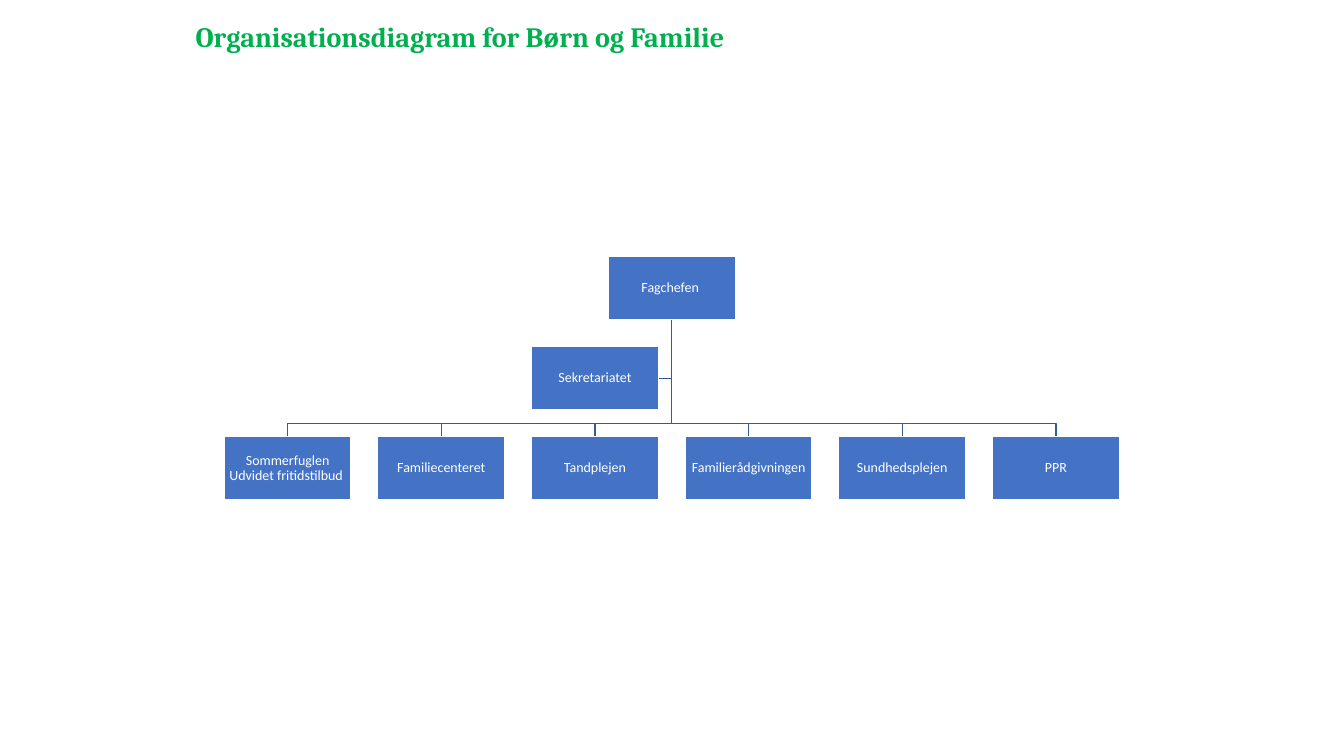
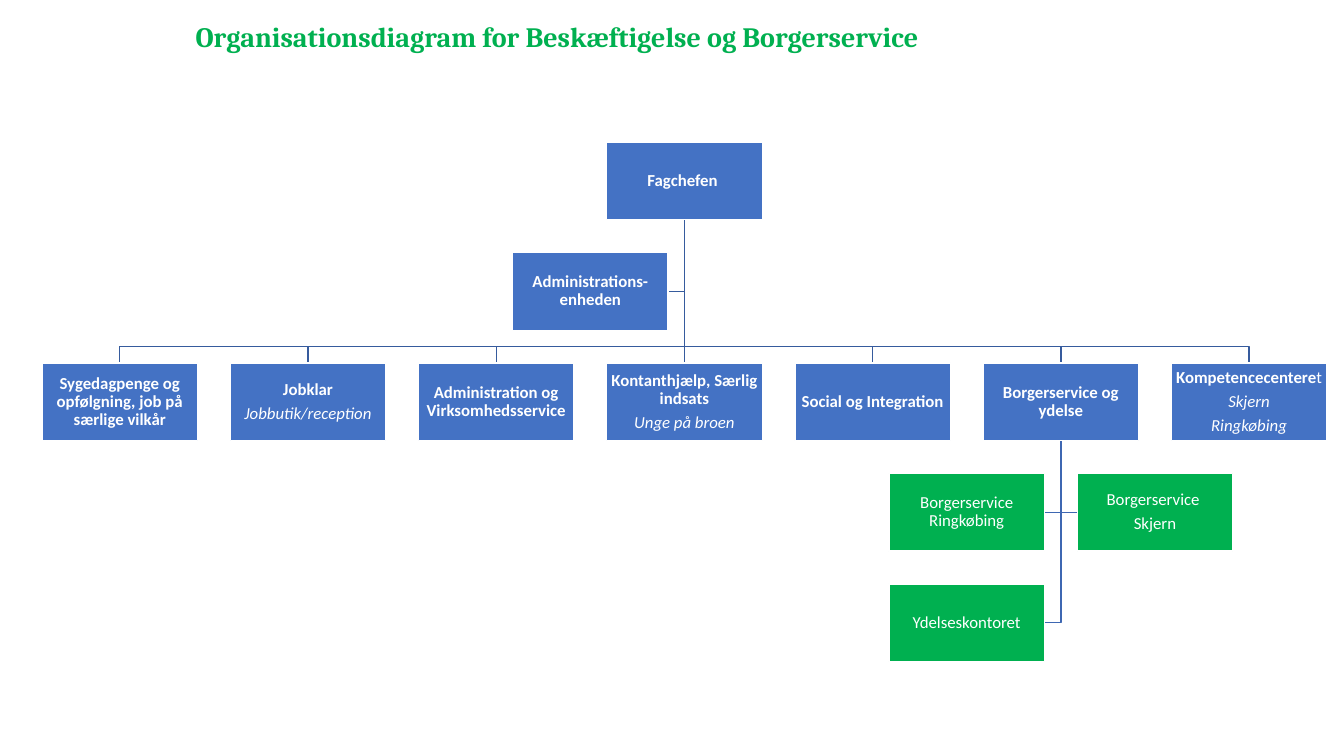
from pptx import Presentation
from pptx.dml.color import RGBColor
from pptx.enum.shapes import MSO_CONNECTOR, MSO_SHAPE
from pptx.enum.text import MSO_ANCHOR, PP_ALIGN
from pptx.oxml.ns import qn
from pptx.util import Cm, Pt

RECT = MSO_SHAPE.RECTANGLE
STRAIGHT = MSO_CONNECTOR.STRAIGHT
TOP, MIDDLE = MSO_ANCHOR.TOP, MSO_ANCHOR.MIDDLE
CENTER, LEFT = PP_ALIGN.CENTER, PP_ALIGN.LEFT

BLUE, GREEN, WHITE = "4472C4", "00B050", "FFFFFF"
TRUNK, BRANCH = "365B9D", "3E67B2"
TITLE = {"name": "Cambria", "size": Pt(20), "bold": True}
PLAIN, BOLD, ITALIC = {}, {"bold": True}, {"italic": True}

COL_PITCH = 1.21
ROW_PITCH = 0.71
HEIGHT = 0.5
HALF_GAP = 0.105


def color(target, value):
    target.rgb = RGBColor.from_string(value)


def add_run(p, text, fmt, text_color):
    r = p.add_run()
    r.text = text
    for key, value in fmt.items():
        setattr(r.font, key, value)
    color(r.font.color, text_color)


def set_text(tf, paras, base, text_color, align, anchor, inset):
    tf.word_wrap = True
    tf.vertical_anchor = anchor
    tf.margin_left = tf.margin_right = Cm(inset[0])
    tf.margin_top = tf.margin_bottom = Cm(inset[1])
    for i, runs in enumerate(paras):
        p = tf.paragraphs[0] if i == 0 else tf.add_paragraph()
        p.alignment = align
        p.line_spacing = 0.9
        if i:
            p.space_before = Pt(base["size"].pt * 0.35)
        for text, fmt in runs:
            for j, line in enumerate(text.split("\n")):
                if j:
                    p.add_line_break()
                add_run(p, line, {**base, **fmt}, text_color)


def add_title(s, text, width):
    tf = s.shapes.add_textbox(Cm(4.68), Cm(0.46), Cm(width), Cm(1.24)).text_frame
    set_text(tf, [[(text, TITLE)]], TITLE, GREEN, LEFT, TOP, (0.25, 0.13))


def add_line(s, points, line_color):
    start, *rest = [(Cm(x), Cm(y)) for x, y in points]
    if len(rest) == 1:
        sp = s.shapes.add_connector(STRAIGHT, *start, *rest[0])
        spPr = sp._element.spPr
        spPr.append(spPr.makeelement(qn("a:effectLst"), {}))
    else:
        outline = s.shapes.build_freeform(*start)
        outline.add_line_segments(rest, close=False)
        sp = outline.convert_to_shape()
        sp.shadow.inherit = False
        sp.fill.background()
    sp.line.width = Pt(1)
    color(sp.line.color, line_color)


def add_unit(s, x, y, w, size, paras, fill=BLUE):
    sp = s.shapes.add_shape(RECT, Cm(x), Cm(y), Cm(w), Cm(w * HEIGHT))
    sp.shadow.inherit = False
    sp.fill.solid()
    color(sp.fill.fore_color, fill)
    color(sp.line.color, WHITE)
    sp.line.width = Pt(1)
    base = {"name": "Calibri", "size": Pt(size)}
    set_text(sp.text_frame, paras, base, WHITE, CENTER, MIDDLE, (0.02, 0.02))


def add_side_units(s, cx, y, w, size, units, fill, line_color):
    start = y - w * (ROW_PITCH - HEIGHT)
    for side, row, paras in units:
        top = y + row * w * ROW_PITCH
        mid = top + w * HEIGHT / 2
        edge = cx + side * w * HALF_GAP
        add_line(s, [(cx, start), (cx, mid), (edge, mid)], line_color)
        add_unit(s, edge if side > 0 else edge - w, top, w, size, paras, fill)


def add_chart_tree(s, left, top, w, size, boss, assistant, units, parent=None, children=()):
    row_tops = [top + i * w * ROW_PITCH for i in range(4)]
    centers = [left + w / 2 + i * w * COL_PITCH for i in range(len(units))]
    cx = (centers[0] + centers[-1]) / 2
    bus = row_tops[2] - w * HALF_GAP
    start = (cx, top + w * HEIGHT)

    add_side_units(s, cx, row_tops[1], w, size, [(-1, 0, assistant)], BLUE, TRUNK)
    for x in centers:
        bend = [(cx, bus), (x, bus)] if abs(x - cx) > 0.01 else []
        add_line(s, [start, *bend, (x, row_tops[2])], TRUNK)
    if children:
        add_side_units(s, centers[parent], row_tops[3], w, size, children, GREEN, BRANCH)
    add_unit(s, cx - w / 2, top, w, size, boss)
    for x, paras in zip(centers, units):
        add_unit(s, x - w / 2, row_tops[2], w, size, paras)


def family_slide(s):
    add_title(s, "Organisationsdiagram for Børn og Familie", 15.06)
    names = ["Sommerfuglen Udvidet fritidstilbud ", "Familiecenteret", "Tandplejen",
             "Familierådgivningen", "Sundhedsplejen", "PPR"]
    add_chart_tree(s, 5.65, 6.46, 3.2, 10,
                   [[("Fagchefen ", PLAIN)]], [[("Sekretariatet", PLAIN)]],
                   [[[(name, PLAIN)]] for name in names])


def employment_slide(s):
    add_title(s, "Organisationsdiagram for Beskæftigelse og Borgerservice", 21.87)
    units = [
        [[("Sygedagpenge og opfølgning, job på særlige vilkår", BOLD)]],
        [[("Jobklar", BOLD)], [("Jobbutik/reception", ITALIC)]],
        [[("Administration og\nVirksomhedsservice", BOLD)]],
        [[("Kontanthjælp, Særlig indsats", BOLD)], [("Unge på broen", ITALIC)]],
        [[("Social og Integration", BOLD)]],
        [[("Borgerservice og ydelse", BOLD)]],
        [[("Kompetencecentere", BOLD), ("t", PLAIN)],
         [("Skjern", ITALIC)], [("Ringkøbing", ITALIC)]],
    ]
    children = [
        (-1, 0, [[("Borgerservice Ringkøbing", PLAIN)]]),
        (1, 0, [[("Borgerservice ", PLAIN)], [("Skjern", PLAIN)]]),
        (-1, 1, [[("Ydelseskontoret", PLAIN)]]),
    ]
    add_chart_tree(s, 1.06, 3.58, 3.92, 12,
                   [[("Fagchefen ", BOLD)]], [[("Administrations-enheden", BOLD)]],
                   units, 5, children)


def main():
    prs = Presentation()
    prs.slide_width, prs.slide_height = Cm(33.87), Cm(19.05)
    for build in (family_slide, employment_slide):
        build(prs.slides.add_slide(prs.slide_layouts[6]))
    prs.save("out.pptx")


if __name__ == "__main__":
    main()
